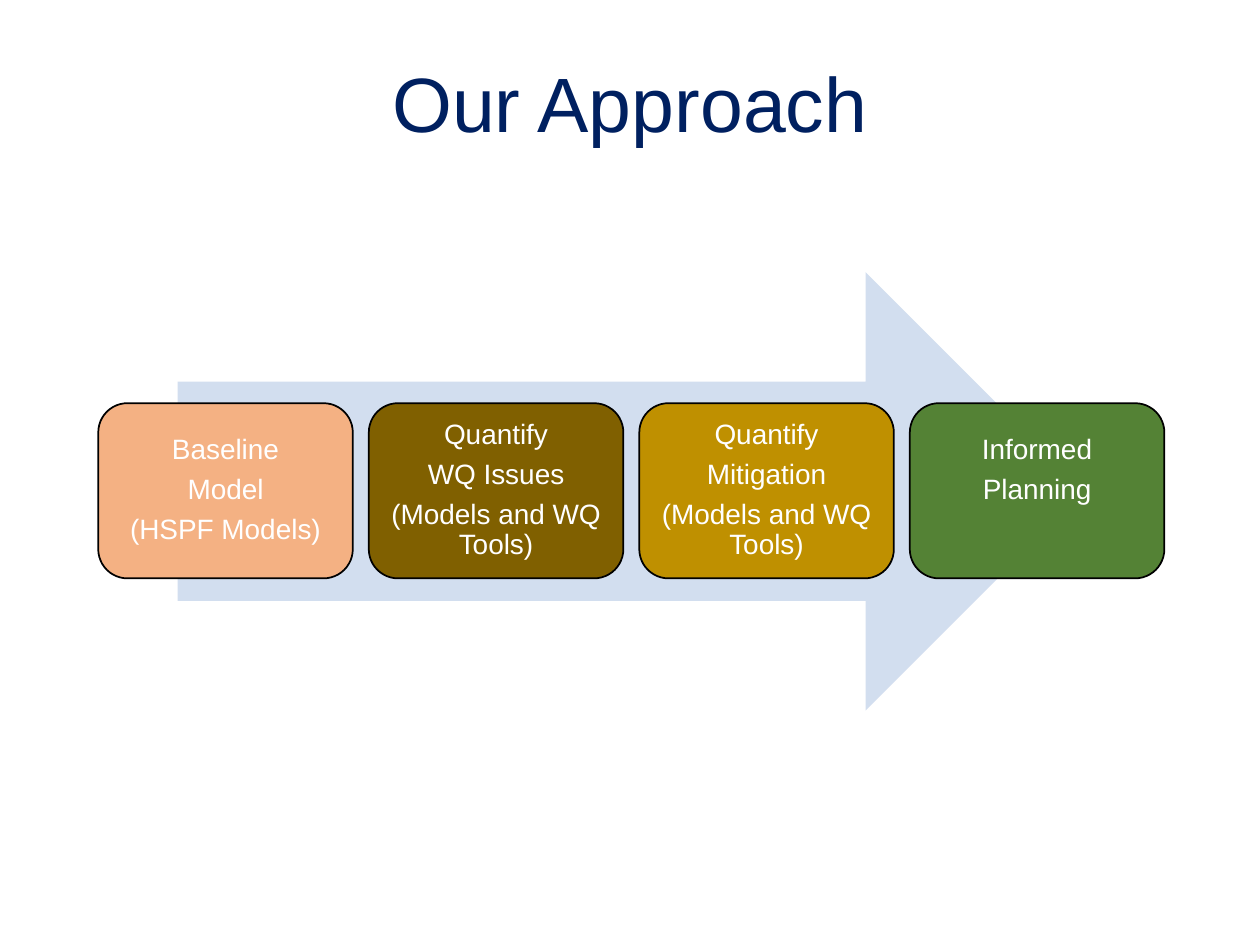
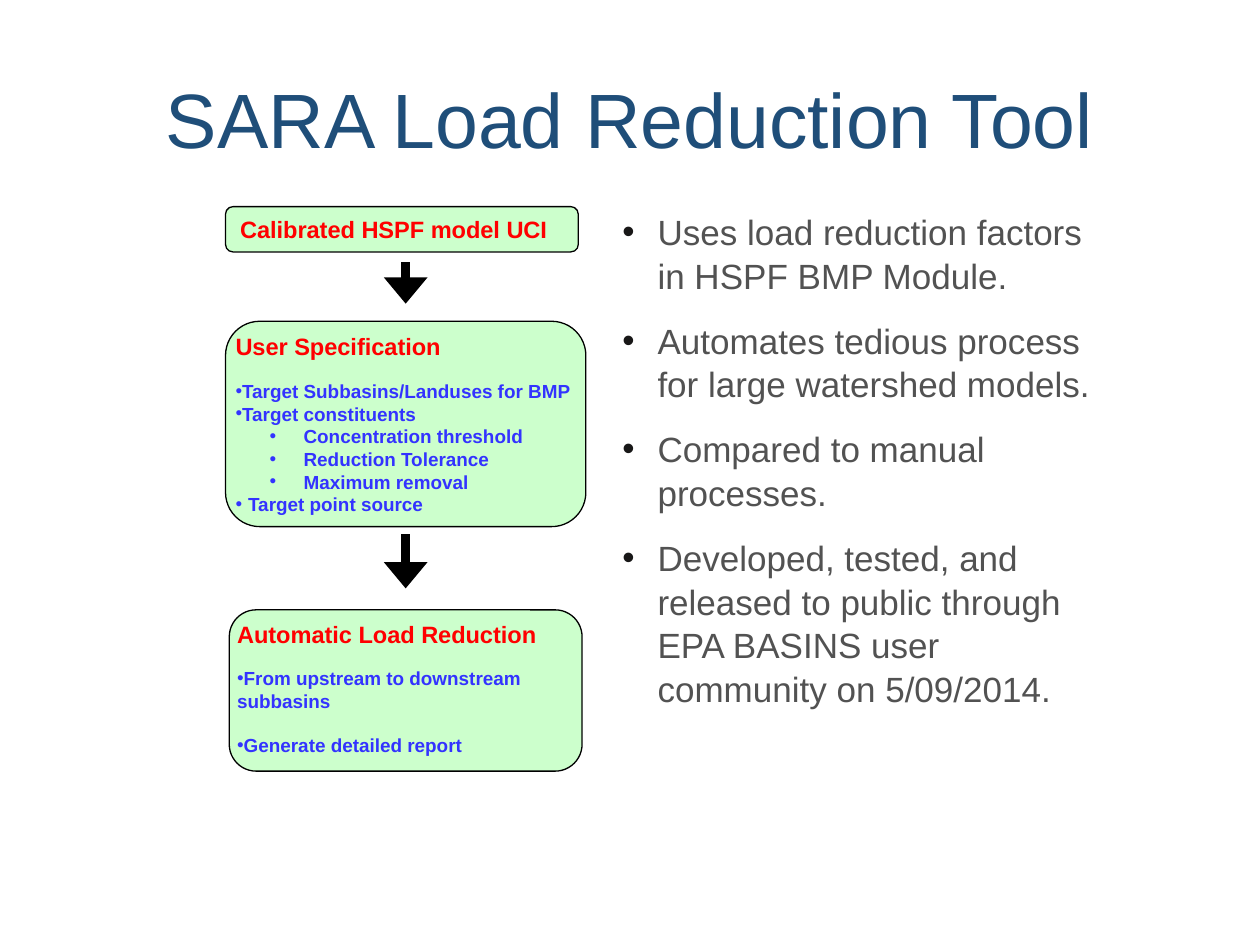
import pptx
import pptx.util
import pptx.dml.color
import pptx.enum.shapes
import pptx.enum.text
import pptx.oxml.ns
from lxml import etree

Inches, Pt = pptx.util.Inches, pptx.util.Pt
SHAPE = pptx.enum.shapes.MSO_SHAPE
LEFT, CENTER = pptx.enum.text.PP_ALIGN.LEFT, pptx.enum.text.PP_ALIGN.CENTER
qn = pptx.oxml.ns.qn


def rgb(value):
    return pptx.dml.color.RGBColor.from_string(value)


class Deck:
    """Hold the shared style and the current slide, and draw each kind of element."""

    FONT = "Arial"
    INK, WHITE, MINT = "000000", "FFFFFF", "CCFFCC"
    HEADING, DETAIL, BODY, BULLET = "FF0000", "3333FF", "525252", "181717"

    def __init__(self):
        self.prs = pptx.Presentation()
        self.prs.slide_width, self.prs.slide_height = Inches(10), Inches(7.5)

    def slide(self, title, box, color):
        self.s = self.prs.slides.add_slide(self.prs.slide_layouts[6])
        sp = self.textbox(box)
        self.paragraph(sp, title, 44, color, align=CENTER, spacing=0.9)

    def frame(self, sp, insets):
        tf = sp.text_frame
        tf.word_wrap = True
        tf.vertical_anchor = pptx.enum.text.MSO_ANCHOR.MIDDLE
        tf.margin_left, tf.margin_top, tf.margin_right, tf.margin_bottom = map(Inches, insets)

    def textbox(self, box):
        sp = self.s.shapes.add_textbox(*map(Inches, box))
        self.frame(sp, (0.1, 0.05, 0.1, 0.05))
        return sp

    def shape(self, kind, box, fill, line=None, insets=(0, 0, 0, 0)):
        sp = self.s.shapes.add_shape(kind, *map(Inches, box))
        sp.shadow.inherit = False
        sp.fill.solid()
        sp.fill.fore_color.rgb = rgb(fill)
        if line:
            sp.line.color.rgb = rgb(self.INK)
            sp.line.width = Pt(line)
        else:
            sp.line.fill.background()
        self.frame(sp, insets)
        return sp

    def paragraph(self, sp, text, size, color, bold=False, align=LEFT, spacing=1.0,
                  before=0, after=0, bullet=None, margin=0, indent=0):
        tf = sp.text_frame
        p = tf.add_paragraph() if tf.paragraphs[0].runs else tf.paragraphs[0]
        if bullet:
            pPr = p._p.get_or_add_pPr()
            pPr.set("marL", str(Inches(margin)))
            pPr.set("indent", str(Inches(indent)))
            buClr = etree.SubElement(pPr, qn("a:buClr"))
            etree.SubElement(buClr, qn("a:srgbClr"), val=bullet)
            etree.SubElement(pPr, qn("a:buFont"), typeface=self.FONT)
            etree.SubElement(pPr, qn("a:buChar"), char="•")
        p.alignment = align
        p.line_spacing = spacing
        p.space_before, p.space_after = Pt(before), Pt(after)
        r = p.add_run()
        r.text = text
        r.font.name, r.font.size, r.font.bold = self.FONT, Pt(size), bold
        r.font.color.rgb = rgb(color)

    def heading(self, sp, text, after=0):
        self.paragraph(sp, text, 13.5, self.HEADING, bold=True, after=after)

    def detail(self, sp, text, margin=0, indent=0, before=0):
        self.paragraph(sp, text, 10.8, self.DETAIL, bold=True, before=before,
                       bullet=self.DETAIL, margin=margin, indent=indent)

    def arrow(self, x, top, bottom):
        c = self.s.shapes.add_connector(
            pptx.enum.shapes.MSO_CONNECTOR.STRAIGHT, *map(Inches, (x, top, x, bottom)))
        c.line.color.rgb = rgb(self.INK)
        c.line.width = Pt(5)
        etree.SubElement(c.line._get_or_add_ln(), qn("a:tailEnd"),
                         type="triangle", w="lg", len="med")
        etree.SubElement(c._element.spPr, qn("a:effectLst"))


def approach(deck):
    deck.slide("Our Approach", (0.5, 0.74, 9, 0.23), "002060")
    deck.shape(SHAPE.RIGHT_ARROW, (1.41, 2.16, 7.2, 3.48), "D2DEEF")
    steps = [
        ("F4B183", ["Baseline", "Model", "(HSPF Models)"], 0.07),
        ("806000", ["Quantify", "WQ Issues", "(Models and WQ Tools)"], 0.07),
        ("BF9000", ["Quantify", "Mitigation", "(Models and WQ Tools)"], 0.07),
        ("548235", ["Informed", "Planning"], 0.39),
    ]
    for i, (fill, lines, bottom) in enumerate(steps):
        sp = deck.shape(SHAPE.ROUNDED_RECTANGLE, (0.78 + i * 2.147, 3.2, 2.02, 1.39),
                        fill, 1, (0.07, 0.07, 0.07, bottom))
        for line in lines:
            deck.paragraph(sp, line, 16, deck.WHITE, align=CENTER, spacing=0.9, after=5.6)


def load_reduction(deck):
    deck.slide("SARA Load Reduction Tool", (0.59, 0.71, 8.82, 0.54), "1F4E79")
    for top, bottom in [(4.24, 4.67), (2.08, 2.41)]:
        deck.arrow(3.22, top, bottom)

    box = SHAPE.FLOWCHART_ALTERNATE_PROCESS
    sp = deck.shape(box, (1.79, 1.64, 2.8, 0.36), deck.MINT, 0.75, (0.1, 0.05, 0.1, 0.05))
    deck.heading(sp, "Calibrated HSPF model UCI")

    sp = deck.shape(box, (1.79, 2.55, 2.86, 1.63), deck.MINT, 0.75)
    deck.heading(sp, "User Specification", after=10.8)
    for text in ["Target Subbasins/Landuses for BMP", "Target constituents"]:
        deck.detail(sp, text)
    for text in ["Concentration threshold", "Reduction Tolerance", "Maximum removal"]:
        deck.detail(sp, text, margin=0.54, indent=-0.27)
    deck.detail(sp, "Target point source", margin=0.1, indent=-0.1)

    sp = deck.shape(box, (1.82, 4.84, 2.8, 1.28), deck.MINT, 0.75, (0, 0, 0, 0.04))
    deck.heading(sp, "Automatic Load Reduction", after=10.8)
    deck.detail(sp, "From upstream to downstream subbasins")
    deck.detail(sp, "Generate detailed report", before=12.2)

    sp = deck.textbox((4.84, 1.66, 4.12, 3.97))
    for text in [
        "Uses load reduction factors in HSPF BMP Module.",
        "Automates tedious process for large watershed models.",
        "Compared to manual processes.",
        "Developed, tested, and released to public through EPA BASINS user "
        "community on 5/09/2014.",
    ]:
        deck.paragraph(sp, text, 20, deck.BODY, spacing=1.04, after=12.2,
                       bullet=deck.BULLET, margin=0.28, indent=-0.28)


def main():
    deck = Deck()
    approach(deck)
    load_reduction(deck)
    deck.prs.save("out.pptx")


if __name__ == "__main__":
    main()
